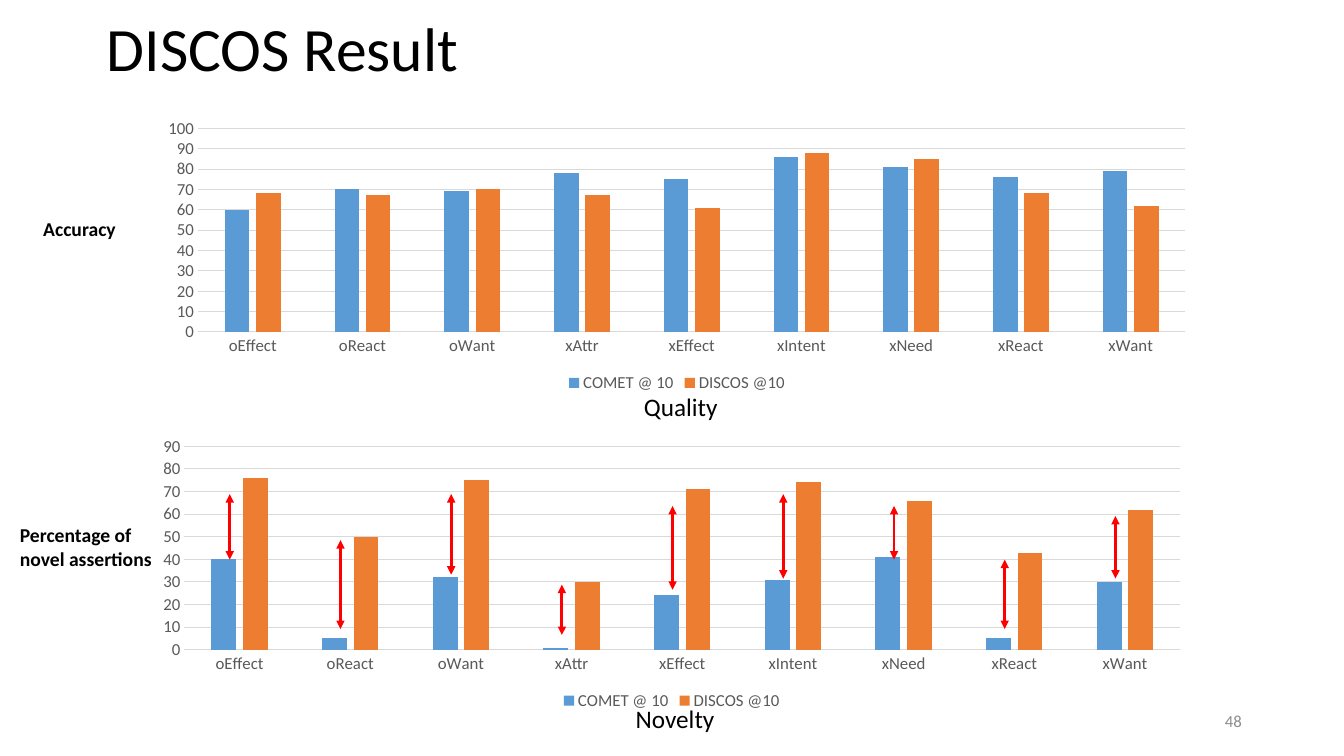
from lxml.etree import SubElement
from pptx import Presentation
from pptx.chart.data import CategoryChartData
from pptx.dml.color import RGBColor
from pptx.enum.chart import XL_CHART_TYPE, XL_LEGEND_POSITION, XL_TICK_MARK
from pptx.enum.shapes import MSO_CONNECTOR
from pptx.enum.text import MSO_ANCHOR, PP_ALIGN
from pptx.oxml.ns import qn
from pptx.util import Cm, Pt

BLACK = RGBColor(0x00, 0x00, 0x00)
GRAY = RGBColor(0x59, 0x59, 0x59)
NUMBER_GRAY = RGBColor(0x8C, 0x8C, 0x8C)
GRID_GRAY = RGBColor(0xD9, 0xD9, 0xD9)
BLUE = RGBColor(0x5B, 0x9B, 0xD5)
ORANGE = RGBColor(0xED, 0x7D, 0x31)
RED = RGBColor(0xFF, 0x00, 0x00)

RELATIONS = ["oEffect", "oReact", "oWant", "xAttr", "xEffect",
             "xIntent", "xNeed", "xReact", "xWant"]
QUALITY = {"COMET @ 10": [60, 70, 69, 78, 75, 86, 81, 76, 79],
           "DISCOS @10": [68, 67, 70, 67, 61, 88, 85, 68, 62]}
NOVELTY = {"COMET @ 10": [40, 5, 32, 1, 24, 31, 41, 5, 30],
           "DISCOS @10": [76, 50, 75, 30, 71, 74, 66, 43, 62]}

# Top and bottom of the gap arrow above each relation, in centimetres
GAP_ARROWS = [(12.45, 14.1), (13.61, 15.85), (12.45, 14.48),
              (14.73, 16), (12.75, 14.86), (12.45, 14.58),
              (12.75, 14.1), (14.1, 15.85), (13, 14.58)]
FIRST_ARROW_X = 5.79
ARROW_STEP = 2.79


class SlideBuilder:
    font_name = "Calibri"

    def __init__(self, slide):
        self.slide = slide

    def style_font(self, font, size, color, bold=False):
        font.name = self.font_name
        font.size = Pt(size)
        font.color.rgb = color
        font.bold = bold

    def title(self, text, left, top, width, height):
        shape = self.slide.shapes.title
        shape.left, shape.top = Cm(left), Cm(top)
        shape.width, shape.height = Cm(width), Cm(height)
        shape.text_frame.text = text
        shape.text_frame.vertical_anchor = MSO_ANCHOR.MIDDLE
        paragraph = shape.text_frame.paragraphs[0]
        paragraph.alignment = PP_ALIGN.LEFT
        paragraph.line_spacing = 0.9
        self.style_font(paragraph.font, 44, BLACK)

    def text(self, text, left, top, width, height, size, color=BLACK,
             bold=False, alignment=PP_ALIGN.LEFT, anchor=MSO_ANCHOR.TOP):
        shape = self.slide.shapes.add_textbox(Cm(left), Cm(top), Cm(width), Cm(height))
        frame = shape.text_frame
        frame.word_wrap = True
        frame.vertical_anchor = anchor
        frame.text = text
        paragraph = frame.paragraphs[0]
        paragraph.alignment = alignment
        self.style_font(paragraph.font, size, color, bold)

    def column_chart(self, series_values, left, top, maximum):
        data = CategoryChartData()
        data.categories = RELATIONS
        for name, values in series_values.items():
            data.add_series(name, values)
        chart = self.slide.shapes.add_chart(
            XL_CHART_TYPE.COLUMN_CLUSTERED, Cm(left), Cm(top), Cm(26.7), Cm(7.16), data).chart
        self.style_font(chart.font, 10, BLACK)
        chart.has_title = False
        chart.has_legend = True
        chart.legend.position = XL_LEGEND_POSITION.BOTTOM
        chart.legend.include_in_layout = False
        self.style_font(chart.legend.font, 12, GRAY)

        plot = chart.plots[0]
        plot.gap_width = 219
        plot.overlap = -27
        plot.vary_by_categories = False
        for series, color in zip(plot.series, (BLUE, ORANGE)):
            series.format.fill.solid()
            series.format.fill.fore_color.rgb = color

        for axis in (chart.category_axis, chart.value_axis):
            axis.major_tick_mark = XL_TICK_MARK.NONE
            axis.minor_tick_mark = XL_TICK_MARK.NONE
            self.style_font(axis.tick_labels.font, 12, GRAY)
        value_axis = chart.value_axis
        value_axis.minimum_scale = 0
        value_axis.maximum_scale = maximum
        value_axis.major_unit = 10
        value_axis.has_major_gridlines = True
        value_axis.format.line.fill.background()
        for line in (chart.category_axis.format.line, value_axis.major_gridlines.format.line):
            line.color.rgb = GRID_GRAY
            line.width = Pt(0.75)

    def double_arrow(self, x, top, bottom):
        connector = self.slide.shapes.add_connector(
            MSO_CONNECTOR.STRAIGHT, Cm(x), Cm(top), Cm(x), Cm(bottom))
        connector.line.color.rgb = RED
        connector.line.width = Pt(2)
        properties = connector.element.spPr
        line = properties.find(qn("a:ln"))
        for end in ("a:headEnd", "a:tailEnd"):
            SubElement(line, qn(end), type="triangle")
        SubElement(properties, qn("a:effectLst"))


def main():
    presentation = Presentation()
    presentation.slide_width = Cm(33.87)
    presentation.slide_height = Cm(19.05)
    title_only = presentation.slide_layouts.get_by_name("Title Only")
    builder = SlideBuilder(presentation.slides.add_slide(title_only))

    builder.title("DISCOS Result", 2.44, 0, 29.21, 2.59)
    builder.text("Novelty", 15.77, 17.6, 2.54, 1.02, 18)
    builder.text("Quality", 15.98, 9.73, 2.54, 1.02, 18)
    builder.column_chart(NOVELTY, 3.58, 10.85, 90)
    builder.column_chart(QUALITY, 3.71, 2.84, 100)
    for index, (top, bottom) in enumerate(GAP_ARROWS):
        builder.double_arrow(FIRST_ARROW_X + index * ARROW_STEP, top, bottom)
    builder.text("Accuracy", 0.84, 5.33, 2.97, 0.86, 14, bold=True)
    builder.text("Percentage of novel assertions", 0.25, 13.06, 3.99, 1.45, 14, bold=True)
    builder.text("48", 23.93, 17.65, 7.62, 1.02, 12, NUMBER_GRAY,
                 alignment=PP_ALIGN.RIGHT, anchor=MSO_ANCHOR.MIDDLE)
    presentation.save("out.pptx")


if __name__ == "__main__":
    main()
